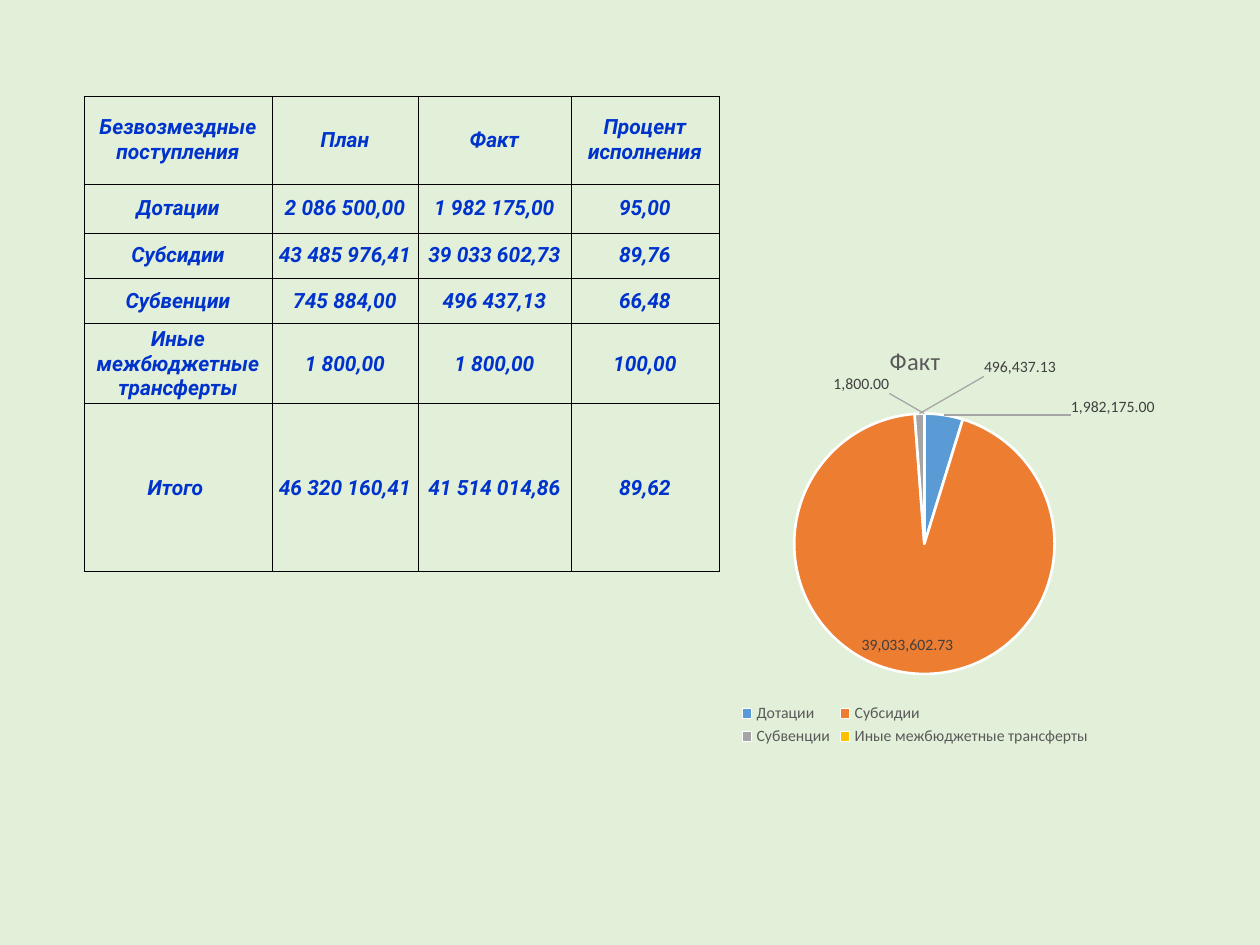
from lxml.etree import SubElement
from pptx import Presentation
from pptx.chart.data import CategoryChartData
from pptx.dml.color import RGBColor
from pptx.enum.chart import XL_CHART_TYPE as ChartType
from pptx.enum.chart import XL_LABEL_POSITION as LabelPosition
from pptx.enum.chart import XL_LEGEND_POSITION as LegendPosition
from pptx.enum.text import MSO_ANCHOR as Anchor
from pptx.enum.text import PP_ALIGN as Align
from pptx.oxml import parse_xml
from pptx.oxml.ns import nsdecls, qn
from pptx.util import Pt

EMU_PER_PX = 914400 / 126

BACKGROUND = RGBColor(0xE2, 0xF0, 0xD9)
BLUE = RGBColor(0x00, 0x33, 0xCC)
WHITE = RGBColor(0xFF, 0xFF, 0xFF)
TEXT_GRAY = RGBColor(0x59, 0x59, 0x59)
LABEL_GRAY = RGBColor(0x40, 0x40, 0x40)
SLICE_COLORS = [
    RGBColor(0x5B, 0x9B, 0xD5),
    RGBColor(0xED, 0x7D, 0x31),
    RGBColor(0xA5, 0xA5, 0xA5),
    RGBColor(0xFF, 0xC0, 0x00),
]

TABLE_FONT = {"name": "Roboto", "size": Pt(12), "bold": True, "italic": True}
TITLE_FONT = {"name": "Calibri", "size": Pt(14), "bold": False}
SMALL_FONT = {"name": "Calibri", "size": Pt(9)}

COLUMN_WIDTHS = [188, 146, 153, 148]
ROW_HEIGHTS = [88, 49, 45, 46, 80, 168]
ROWS = [
    ["Безвозмездные поступления", "План", "Факт", "Процент исполнения"],
    ["Дотации", "2 086 500,00", "1 982 175,00", "95,00"],
    ["Субсидии", "43 485 976,41", "39 033 602,73", "89,76"],
    ["Субвенции", "745 884,00", "496 437,13", "66,48"],
    ["Иные межбюджетные трансферты", "1 800,00", "1 800,00", "100,00"],
    ["Итого ", "46 320 160,41", "41 514 014,86", "89,62"],
]
ACTUAL_VALUES = [1982175, 39033602.73, 496437.13, 1800]
PLOT_AREA = {"x": 0.11, "y": 0.21, "w": 0.81, "h": 0.61}
# Shift of the moved labels, as a share of the chart size
LABEL_SHIFTS = {0: (0.2, 0.02), 2: (0.16, -0.07), 3: (-0.1, -0.03)}


def px(length):
    return round(length * EMU_PER_PX)


def apply_format(target, values):
    for name, value in values.items():
        setattr(target, name, value)


def set_font(font, values, color):
    apply_format(font, values)
    font.color.rgb = color


def manual_layout(values):
    layout = parse_xml(f"<c:layout {nsdecls('c')}><c:manualLayout/></c:layout>")
    for name, value in values.items():
        SubElement(layout[0], qn(f"c:{name}")).set("val", str(value))
    return layout


class SlideBuilder:
    def __init__(self, presentation):
        self.slide = presentation.slides.add_slide(presentation.slide_layouts[6])
        fill = self.slide.background.fill
        fill.solid()
        fill.fore_color.rgb = BACKGROUND

    def border(self, cell):
        properties = cell._tc.get_or_add_tcPr()
        for position, side in enumerate(("lnL", "lnR", "lnT", "lnB")):
            properties.insert(position, parse_xml(
                f'<a:{side} {nsdecls("a")} w="6350"><a:solidFill>'
                f'<a:srgbClr val="000000"/></a:solidFill></a:{side}>'))

    def table(self, left, top, widths, heights, rows):
        frame = self.slide.shapes.add_table(
            len(rows), len(widths), px(left), px(top), px(sum(widths)), px(sum(heights)))
        table = frame.table
        apply_format(table, {"first_row": False, "horz_banding": False})
        for column, width in zip(table.columns, widths):
            column.width = px(width)
        for row, height, texts in zip(table.rows, heights, rows):
            row.height = px(height)
            for cell, text in zip(row.cells, texts):
                self.cell(cell, text)

    def cell(self, cell, text):
        apply_format(cell, {
            "margin_left": 0, "margin_right": 0, "margin_top": 0, "margin_bottom": 0,
            "vertical_anchor": Anchor.MIDDLE, "text": text})
        cell.fill.background()
        self.border(cell)
        paragraph = cell.text_frame.paragraphs[0]
        paragraph.alignment = Align.CENTER
        set_font(paragraph.runs[0].font, TABLE_FONT, BLUE)

    def pie(self, left, top, width, height, title, categories, values):
        data = CategoryChartData()
        data.categories = categories
        data.add_series(title, values)
        chart = self.slide.shapes.add_chart(
            ChartType.PIE, px(left), px(top), px(width), px(height), data).chart
        apply_format(chart.font, {"name": "Calibri", "size": Pt(10)})

        # Title and legend
        chart.has_title = True
        chart.chart_title.include_in_layout = False
        title_frame = chart.chart_title.text_frame
        title_frame.text = title
        set_font(title_frame.paragraphs[0].runs[0].font, TITLE_FONT, TEXT_GRAY)
        chart.has_legend = True
        apply_format(chart.legend, {
            "position": LegendPosition.BOTTOM, "include_in_layout": False})
        set_font(chart.legend.font, SMALL_FONT, TEXT_GRAY)

        # Plot area
        plot_area = chart._chartSpace.chart.plotArea
        for old_layout in plot_area.findall(qn("c:layout")):
            plot_area.remove(old_layout)
        plot_area.insert(0, manual_layout(
            {"layoutTarget": "inner", "xMode": "edge", "yMode": "edge", **PLOT_AREA}))

        # Slices
        plot = chart.plots[0]
        plot.vary_by_categories = True
        series = plot.series[0]
        for index, color in enumerate(SLICE_COLORS):
            style = series.points[index].format
            style.fill.solid()
            style.fill.fore_color.rgb = color
            style.line.width = Pt(1.5)
            style.line.color.rgb = WHITE
        self.pie_labels(series)

    def pie_labels(self, series):
        labels = series.data_labels
        apply_format(labels, {
            "show_value": True, "number_format": "#,##0.00",
            "number_format_is_linked": False, "position": LabelPosition.BEST_FIT})
        set_font(labels.font, SMALL_FONT, LABEL_GRAY)
        for index, (x, y) in LABEL_SHIFTS.items():
            label = series.points[index].data_label
            label.position = LabelPosition.BEST_FIT
            set_font(label.font, SMALL_FONT, LABEL_GRAY)
        for element in labels._element.findall(qn("c:dLbl")):
            number = element.find(qn("c:idx"))
            x, y = LABEL_SHIFTS[int(number.get("val"))]
            number.addnext(manual_layout({"x": x, "y": y}))
        labels._element.append(parse_xml(
            f'<c:leaderLines {nsdecls("c", "a")}><c:spPr><a:ln w="9525"><a:solidFill>'
            '<a:srgbClr val="A6A6A6"/></a:solidFill></a:ln></c:spPr></c:leaderLines>'))


def main():
    presentation = Presentation()
    apply_format(presentation, {"slide_width": px(1260), "slide_height": px(945)})
    builder = SlideBuilder(presentation)
    builder.table(84, 96, COLUMN_WIDTHS, ROW_HEIGHTS, ROWS)
    categories = [row[0] for row in ROWS[1:-1]]
    builder.pie(600, 324, 630, 427, "Факт", categories, ACTUAL_VALUES)
    presentation.save("out.pptx")


if __name__ == "__main__":
    main()
